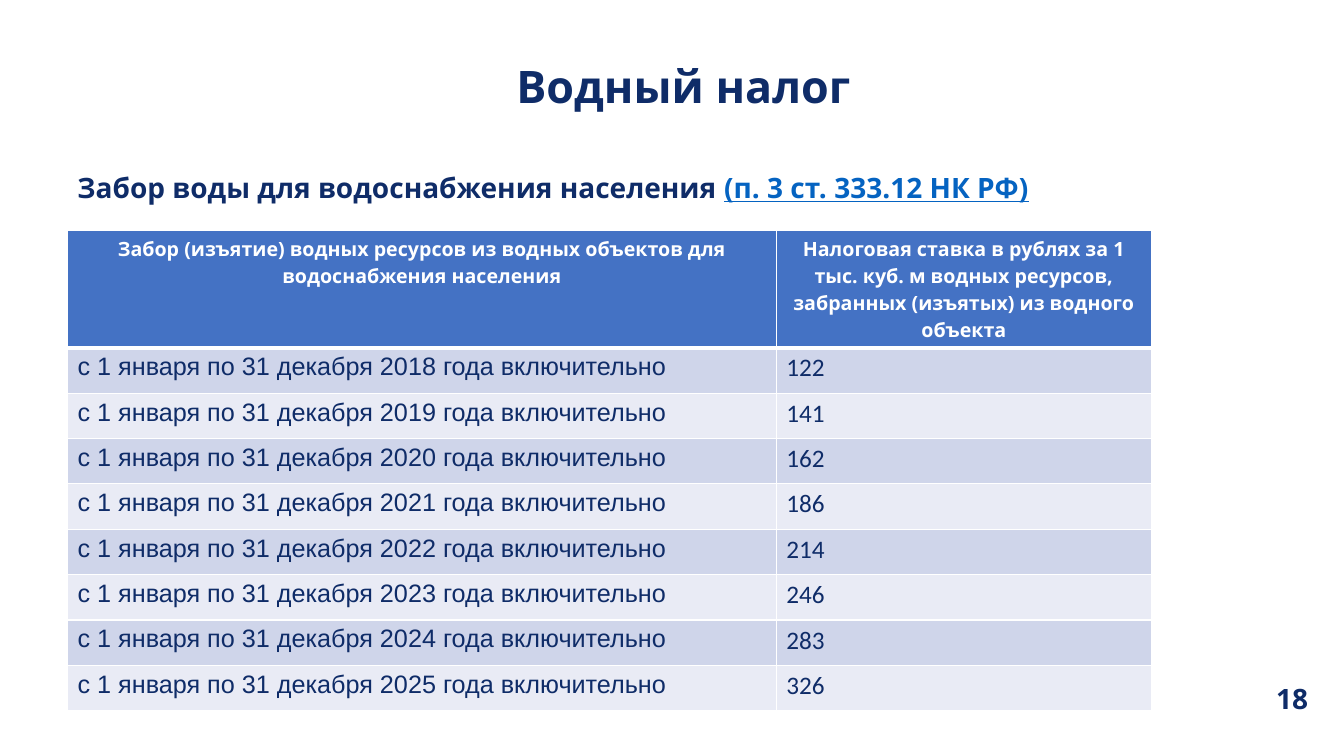
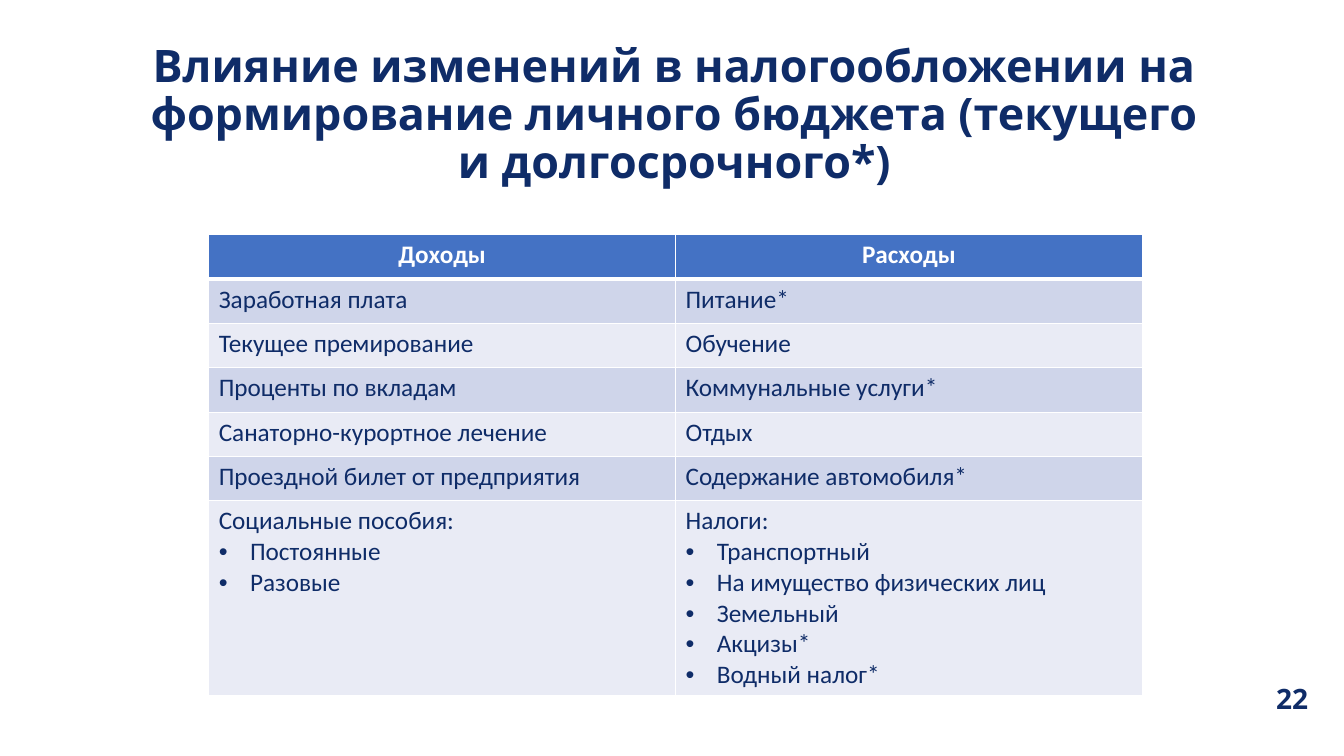
from lxml.etree import SubElement
from pptx import Presentation
from pptx.dml.color import RGBColor
from pptx.enum.text import MSO_ANCHOR, MSO_AUTO_SIZE, PP_ALIGN
from pptx.oxml.ns import qn
from pptx.util import Pt

PX = 9144
COLORS = {
    "navy": "0F2C68",
    "link": "0563C1",
    "header": "4472C4",
    "band_dark": "CFD5EA",
    "band_light": "E9EBF5",
    "white": "FFFFFF",
}
TITLE_FONT = "Open Sans"
LINE_SPACING = 0.9
BULLET_INDENT = 31
NUMBER_BOX = (1256, 675, 60, 48)

WATER_HEADER = (
    "Забор (изъятие) водных ресурсов из водных объектов для водоснабжения населения",
    "Налоговая ставка в рублях за 1 тыс. куб. м водных ресурсов, забранных (изъятых) из водного объекта",
)
WATER_RATES = (122, 141, 162, 186, 214, 246, 283, 326)
WATER_ROWS = [
    (f"с 1 января по 31 декабря {year} года включительно", str(rate))
    for year, rate in enumerate(WATER_RATES, 2018)
]

BUDGET_HEADER = ("Доходы", "Расходы")
BUDGET_ROWS = [
    ("Заработная плата", "Питание*"),
    ("Текущее премирование", "Обучение"),
    ("Проценты по вкладам", "Коммунальные услуги*"),
    ("Санаторно-курортное лечение", "Отдых"),
    ("Проездной билет от предприятия", "Содержание автомобиля*"),
    (
        "Социальные пособия:\nПостоянные\nРазовые",
        "Налоги:\nТранспортный\nНа имущество физических лиц\nЗемельный\nАкцизы*\nВодный налог*",
    ),
]


def px(value):
    return int(value * PX)


def rgb(name):
    return RGBColor.from_string(COLORS[name])


def add_span(para, text, font=TITLE_FONT, size=20, color="navy", bold=True, underline=None):
    span = para.add_run()
    span.text = text
    span.font.name = font
    span.font.size = Pt(size)
    span.font.color.rgb = rgb(color)
    span.font.bold = bold
    span.font.underline = underline


def set_bullet(para):
    properties = para._p.get_or_add_pPr()
    properties.set("marL", str(px(BULLET_INDENT)))
    properties.set("indent", str(-px(BULLET_INDENT)))
    SubElement(properties, qn("a:buFont"), typeface="Arial")
    SubElement(properties, qn("a:buChar"), char="•")


def prepare_frame(frame):
    frame.word_wrap = True
    frame.auto_size = MSO_AUTO_SIZE.NONE
    frame.vertical_anchor = MSO_ANCHOR.TOP
    para = frame.paragraphs[0]
    para.line_spacing = LINE_SPACING
    return para


def add_text(page, box, *parts):
    para = prepare_frame(page.shapes.add_textbox(*map(px, box)).text_frame)
    for text, style in parts:
        add_span(para, text, **style)


def add_page(deck, title, title_box, number):
    page = deck.slides.add_slide(deck.slide_layouts[5])
    heading = page.shapes.title
    heading.left, heading.top, heading.width, heading.height = map(px, title_box)
    para = prepare_frame(heading.text_frame)
    para.alignment = PP_ALIGN.CENTER
    add_span(para, title, size=32)
    add_text(page, NUMBER_BOX, (str(number), {}))
    return page


def set_borders(cell, top, bottom):
    properties = cell._tc.get_or_add_tcPr()
    for side, width in (("L", 1), ("R", 1), ("T", top), ("B", bottom)):
        line = SubElement(properties, qn(f"a:ln{side}"), w=str(Pt(width)))
        fill = SubElement(line, qn("a:solidFill"))
        SubElement(fill, qn("a:srgbClr"), val=COLORS["white"])


def fill_cell(cell, row, text, style):
    set_borders(cell, 3 if row == 1 else 1, 3 if row == 0 else 1)
    cell.fill.solid()
    band = "band_dark" if row % 2 else "band_light"
    cell.fill.fore_color.rgb = rgb(band if row else "header")
    frame = cell.text_frame
    for index, line in enumerate(text.split("\n")):
        para = frame.add_paragraph() if index else frame.paragraphs[0]
        para.alignment = PP_ALIGN.LEFT if row else PP_ALIGN.CENTER
        if index:
            set_bullet(para)
        add_span(para, line, **style)


def add_grid(page, origin, widths, heights, rows, header_style, body_fonts):
    box = (*origin, sum(widths), sum(heights))
    table = page.shapes.add_table(len(rows), len(widths), *map(px, box)).table
    for column, width in zip(table.columns, widths):
        column.width = px(width)
    for row, (texts, height) in enumerate(zip(rows, heights)):
        table.rows[row].height = px(height)
        for column, text in enumerate(texts):
            body_style = {"font": body_fonts[column], "size": 18, "bold": False}
            style = body_style if row else {"color": "white", **header_style}
            fill_cell(table.cell(row, column), row, text, style)


def add_water_tax_page(deck):
    page = add_page(deck, "Водный налог", (67, 59, 1222, 64), 18)
    add_text(
        page,
        (67, 168, 1222, 48),
        ("Забор воды для водоснабжения населения ", {}),
        ("(п. 3 ст. 333.12 НК РФ)", {"color": "link", "underline": True}),
    )
    add_grid(
        page,
        origin=(67, 229),
        widths=(703, 372),
        heights=[116] + [45] * len(WATER_ROWS),
        rows=[WATER_HEADER] + WATER_ROWS,
        header_style={"size": 14},
        body_fonts=("Arial", "Calibri"),
    )


def add_budget_page(deck):
    title = (
        "Влияние изменений в налогообложении на формирование "
        "личного бюджета (текущего и долгосрочного*)"
    )
    page = add_page(deck, title, (126, 38, 1086, 172), 22)
    add_grid(
        page,
        origin=(207, 233),
        widths=(463, 463),
        heights=[44] * len(BUDGET_ROWS) + [189],
        rows=[BUDGET_HEADER] + BUDGET_ROWS,
        header_style={"font": "Calibri", "size": 18},
        body_fonts=("Calibri", "Calibri"),
    )


def main():
    deck = Presentation()
    deck.slide_width, deck.slide_height = px(1333), px(750)
    add_water_tax_page(deck)
    add_budget_page(deck)
    deck.save("out.pptx")


if __name__ == "__main__":
    main()
